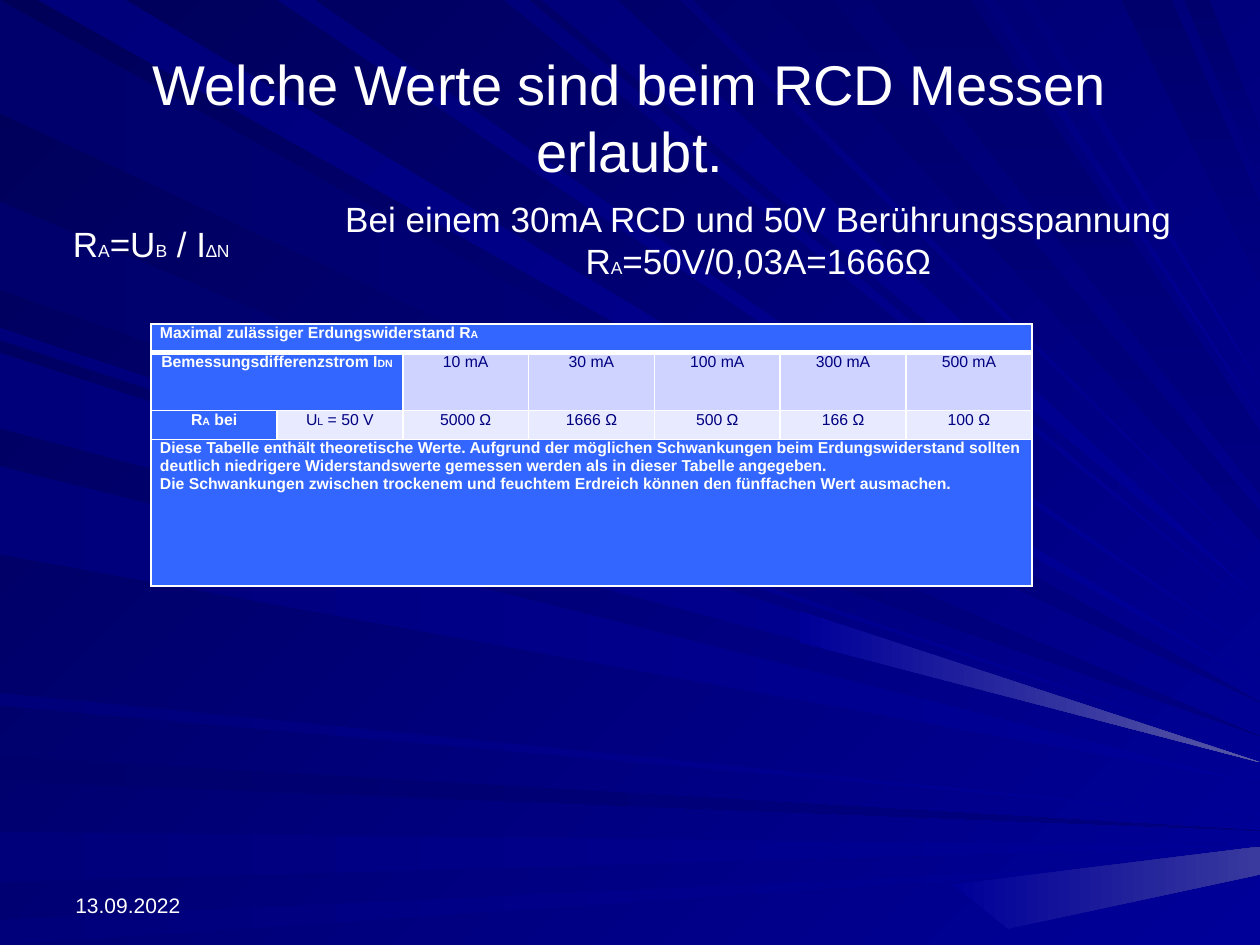
from lxml import etree
from pptx import Presentation
from pptx.dml.color import RGBColor
from pptx.enum import text as t
from pptx.oxml import ns
from pptx.util import Inches, Pt

WHITE = RGBColor(0xFF, 0xFF, 0xFF)
NAVY = RGBColor(0x00, 0x00, 0x80)
BLUE = RGBColor(0x33, 0x66, 0xFF)
LILAC = RGBColor(0xCE, 0xD3, 0xFF)
PALE = RGBColor(0xE8, 0xEA, 0xFF)
MIDNIGHT = RGBColor(0x00, 0x00, 0x58)
DARK = RGBColor(0x00, 0x00, 0x6D)
DEEP = RGBColor(0x00, 0x00, 0x7B)
ROYAL = RGBColor(0x00, 0x00, 0x99)
GLOW = RGBColor(0x5A, 0x5A, 0xA6)
HAZE = RGBColor(0x39, 0x39, 0x9E)
FONT = "Arial"
CENTER, LEFT = t.PP_ALIGN.CENTER, t.PP_ALIGN.LEFT
WIDTH, HEIGHT = 10, 7.5

# A line of text is a tuple of runs: normal and subscript-sized runs alternate.
TITLE = ("Welche Werte sind beim RCD Messen erlaubt.",)
DATE = ("13.09.2022",)
FORMULA = ("R", "A", "=U", "B", " / I", "∆N")
EXAMPLE = ("Bei einem 30mA RCD und 50V Berührungsspannung R", "A", "=50V/0,03A=1666Ω")

# Table rows: height, then cells as (columns spanned, lines, fill, alignment)
CURRENTS = ["10 mA", "30 mA", "100 mA", "300 mA", "500 mA"]
RESISTANCES = ["5000 Ω", "1666 Ω", "500 Ω", "166 Ω", "100 Ω"]
NOTES = [
    ("Diese Tabelle enthält theoretische Werte. Aufgrund der möglichen Schwankungen "
     "beim Erdungswiderstand sollten deutlich niedrigere Widerstandswerte gemessen "
     "werden als in dieser Tabelle angegeben.",),
    ("Die Schwankungen zwischen trockenem und feuchtem Erdreich können den fünffachen "
     "Wert ausmachen.",),
]
ROWS = [
    (0.23, [(7, [("Maximal zulässiger Erdungswiderstand R", "A")], BLUE, LEFT)]),
    (0.46, [(2, [("Bemessungsdifferenzstrom I", "DN")], BLUE, CENTER)]
     + [(1, [(value,)], LILAC, CENTER) for value in CURRENTS]),
    (0.23, [(1, [("R", "A", " bei")], BLUE, CENTER),
            (1, [("U", "L", " = 50 V")], PALE, CENTER)]
     + [(1, [(value,)], PALE, CENTER) for value in RESISTANCES]),
    (1.16, [(7, NOTES, BLUE, LEFT)]),
]

# All rays run towards one point beyond the right edge.
VANISHING_X, VANISHING_Y = 12.2, 6.7
# Where rays start on the left edge (y from, y to) and on the top edge (x from, x to)
LEFT_DARK = [(0, 0.9), (1.6, 2.3), (6, 6.2)]
LEFT_BRIGHT = [(2.6, 2.7), (2.8, 3.4), (3.7, 4.4), (5.5, 5.6), (6.6, 7), (7.3, 7.5)]
TOP_DARK = [(6.1, 6.6), (6.9, 7.7), (8.9, 9.3), (9.4, 9.6)]
TOP_BRIGHT = [(0.3, 1), (2.2, 2.5), (4, 4.2), (4.3, 4.9), (5.4, 5.5), (7.8, 7.9), (8.1, 8.2)]
# Bright ends at the right edge
HIGHLIGHTS = [
    (GLOW, [(6.35, 4.85), (6.35, 5.1), (WIDTH, 6.05)]),
    (HAZE, [(7.56, 7.02), (8, 7.37), (WIDTH, 6.94), (WIDTH, 6.72)]),
]


def paint(fill, first, last, angle):
    """Fill with a gradient that turns clockwise by the angle."""
    fill.gradient()
    fill.gradient_angle = -angle % 360
    for stop, color, position in zip(fill.gradient_stops, (first, last), (0, 1)):
        stop.color.rgb = color
        stop.position = position


def add_ray(slide, corners, first, last, angle):
    points = [(Inches(x), Inches(y)) for x, y in corners]
    builder = slide.shapes.build_freeform(*points[0])
    builder.add_line_segments(points[1:], close=True)
    ray = builder.convert_to_shape()
    ray.shadow.inherit = False
    ray.line.fill.background()
    paint(ray.fill, first, last, angle)


def meet_right_edge(x, y):
    """Where the line from a point to the vanishing point leaves the slide."""
    return WIDTH, y + (VANISHING_Y - y) * (WIDTH - x) / (VANISHING_X - x)


def add_background(slide):
    paint(slide.background.fill, MIDNIGHT, ROYAL, 45)
    for spans, on_top, first, last, angle in [
        (LEFT_DARK, False, DARK, NAVY, 0),
        (TOP_DARK, True, DARK, NAVY, 90),
        (LEFT_BRIGHT, False, DEEP, ROYAL, 0),
        (TOP_BRIGHT, True, DEEP, ROYAL, 45),
    ]:
        for span in spans:
            start, end = [(place, 0) if on_top else (0, place) for place in span]
            if on_top and first == DARK:
                tip = [meet_right_edge(*end), meet_right_edge(*start)]
            else:
                middle = [sum(pair) / 2 for pair in zip(start, end)]
                tip = [meet_right_edge(*middle)]
            add_ray(slide, [start, end, *tip], first, last, angle)
    for color, corners in HIGHLIGHTS:
        add_ray(slide, corners, ROYAL, color, 0)


def write(frame, lines, sizes, align=CENTER, color=WHITE, bold=False):
    for index, line in enumerate(lines):
        paragraph = frame.add_paragraph() if index else frame.paragraphs[0]
        paragraph.alignment = align
        for position, words in enumerate(line):
            run = paragraph.add_run()
            run.text = words
            run.font.name = FONT
            run.font.size = Pt(sizes[position % 2])
            run.font.color.rgb = color
            run.font.bold = bold


def fill_box(shape, box, line, sizes, align=CENTER, anchor=t.MSO_ANCHOR.MIDDLE):
    shape.left, shape.top, shape.width, shape.height = map(Inches, box)
    frame = shape.text_frame
    frame.word_wrap = True
    frame.auto_size = t.MSO_AUTO_SIZE.NONE
    frame.vertical_anchor = anchor
    write(frame, [line], sizes, align)


def set_borders(cell, widths):
    properties = cell._tc.get_or_add_tcPr()
    for index, (side, width) in enumerate(widths.items()):
        line = etree.Element(ns.qn(f"a:{side}"), w=str(Pt(width)))
        solid = etree.SubElement(line, ns.qn("a:solidFill"))
        etree.SubElement(solid, ns.qn("a:srgbClr"), val=str(WHITE))
        properties.insert(index, line)


def add_resistance_table(slide):
    total = sum(height for height, _ in ROWS)
    table = slide.shapes.add_table(len(ROWS), 7, Inches(1.2), Inches(2.57),
                                   Inches(6.99), Inches(total)).table
    table.first_row = table.horz_banding = False
    for row, (height, cells) in enumerate(ROWS):
        table.rows[row].height = Inches(height)
        column = 0
        for span, lines, color, align in cells:
            cell = table.cell(row, column)
            if span > 1:
                cell.merge(table.cell(row, column + span - 1))
            cell.margin_left = cell.margin_right = Inches(0.07)
            cell.margin_top = cell.margin_bottom = 0
            heading = color == BLUE
            write(cell.text_frame, lines, (9, 6), align, WHITE if heading else NAVY, heading)
            for part in range(column, column + span):
                covered = table.cell(row, part)
                covered.fill.solid()
                covered.fill.fore_color.rgb = color
                set_borders(covered, {"lnL": 1, "lnR": 1, "lnT": 3 if row == 1 else 1,
                                      "lnB": 3 if row == 0 else 1})
            column += span


def main():
    presentation = Presentation()
    presentation.slide_width, presentation.slide_height = Inches(WIDTH), Inches(HEIGHT)
    slide = presentation.slides.add_slide(presentation.slide_layouts[5])
    shapes = slide.shapes
    add_background(slide)

    def add_box():
        return shapes.add_textbox(0, 0, 0, 0)

    fill_box(add_box(), (0.5, 6.83, 2.33, 0.5), DATE, (12,), LEFT, t.MSO_ANCHOR.BOTTOM)
    title = shapes.title
    shapes._spTree.append(title._element)  # lift the title above the rays
    fill_box(title, (0.5, 0.3, 9, 1.25), TITLE, (32,))
    fill_box(add_box(), (0, 1.62, 2.4, 0.62), FORMULA, (20, 10))
    add_resistance_table(slide)
    fill_box(add_box(), (2.4, 1.59, 7.24, 0.62), EXAMPLE, (20, 10))
    presentation.save("out.pptx")


if __name__ == "__main__":
    main()
